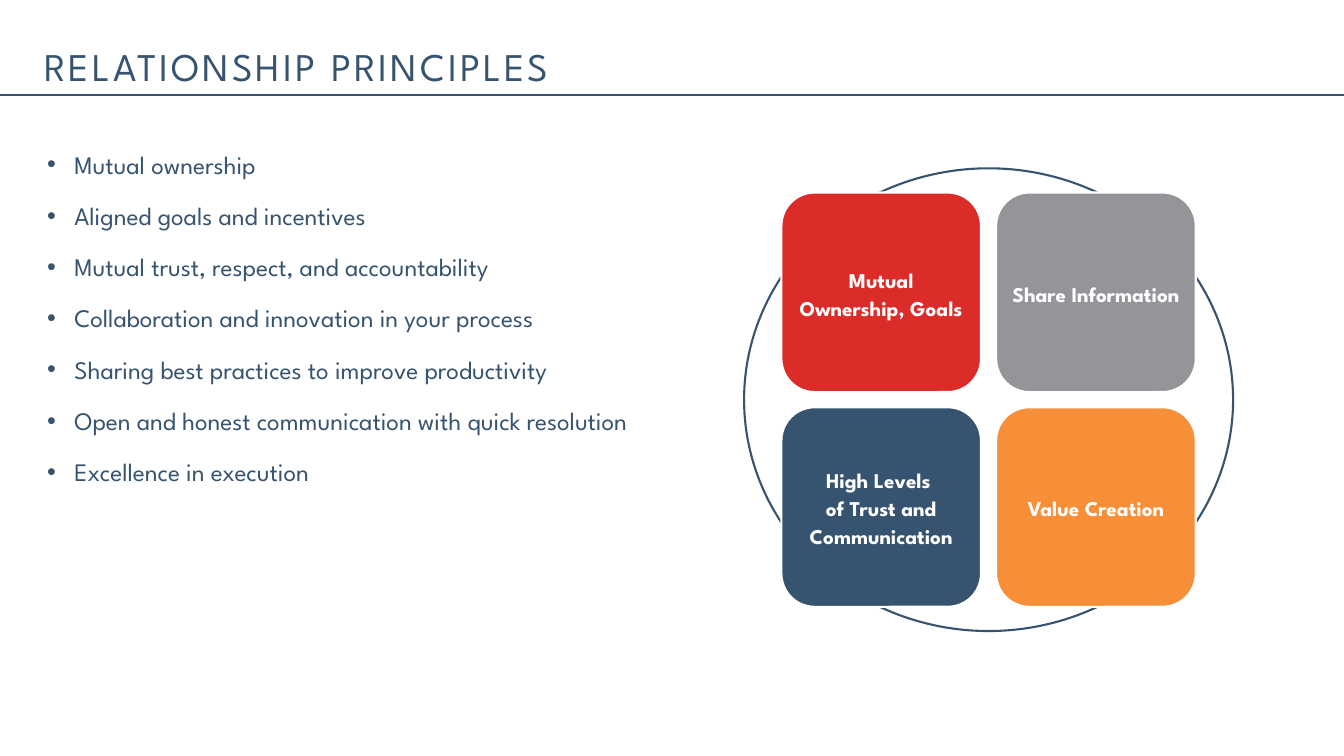
from dataclasses import dataclass

from pptx import Presentation
from pptx.dml.color import RGBColor
from pptx.enum.shapes import MSO_CONNECTOR as Connector, MSO_SHAPE as Shape
from pptx.enum.text import MSO_ANCHOR as Anchor, PP_ALIGN as Align
from pptx.oxml.ns import qn
from pptx.util import Inches, Pt
from lxml.etree import SubElement


@dataclass(frozen=True)
class Theme:
    font: str = "League Spartan"
    navy: str = "365470"
    red: str = "DC2C29"
    gray: str = "939598"
    orange: str = "F78E38"
    white: str = "FFFFFF"
    title_size: int = 28
    body_size: int = 18
    tile_size: int = 15


class SlideBuilder:
    def __init__(self, slide, theme):
        self.slide = slide
        self.theme = theme

    def style_font(self, font, size, color, bold=False):
        font.name = self.theme.font
        font.size = Pt(size)
        font.bold = bold
        font.color.rgb = RGBColor.from_string(color)

    def set_frame(self, frame, anchor, side, edge):
        frame.word_wrap = True
        frame.vertical_anchor = anchor
        frame.margin_left = frame.margin_right = Inches(side)
        frame.margin_top = frame.margin_bottom = Inches(edge)

    def title(self, text, left, top, width, height):
        title = self.slide.shapes.title
        title.left, title.top = Inches(left), Inches(top)
        title.width, title.height = Inches(width), Inches(height)
        frame = title.text_frame
        frame.text = text
        self.set_frame(frame, Anchor.BOTTOM, 0.1, 0.05)
        heading = frame.paragraphs[0]
        heading.alignment = Align.LEFT
        heading.line_spacing = Pt(17.2)
        for run in heading.runs:
            self.style_font(run.font, self.theme.title_size, self.theme.navy)
            run.font._element.set("spc", "220")

    def rule(self, y, width):
        rule = self.slide.shapes.add_connector(
            Connector.STRAIGHT, 0, Inches(y), Inches(width), Inches(y))
        rule.line.color.rgb = RGBColor.from_string(self.theme.navy)
        rule.line.width = Pt(1.25)
        SubElement(rule._element.spPr, qn("a:effectLst"))

    def bullets(self, items, left, top, width, height):
        box = self.slide.shapes.add_textbox(
            Inches(left), Inches(top), Inches(width), Inches(height))
        frame = box.text_frame
        self.set_frame(frame, Anchor.TOP, 0.1, 0.05)
        frame.text = "\n".join(items)
        for item in frame.paragraphs:
            props = item._p.get_or_add_pPr()
            props.set("marL", str(Inches(0.3)))
            props.set("indent", str(Inches(-0.27)))
            item.space_after = Pt(15)
            bullet_color = SubElement(props, qn("a:buClr"))
            SubElement(bullet_color, qn("a:srgbClr"), val=self.theme.navy)
            SubElement(props, qn("a:buFont"), typeface="Arial")
            SubElement(props, qn("a:buChar"), char="•")
            for run in item.runs:
                self.style_font(run.font, self.theme.body_size, self.theme.navy)

    def shape(self, kind, left, top, width, height, line, fill=None):
        shape = self.slide.shapes.add_shape(
            kind, Inches(left), Inches(top), Inches(width), Inches(height))
        shape.shadow.inherit = False
        shape.line.color.rgb = RGBColor.from_string(line)
        shape.line.width = Pt(1.5)
        if fill:
            shape.fill.solid()
            shape.fill.fore_color.rgb = RGBColor.from_string(fill)
        else:
            shape.fill.background()
        return shape

    def tile(self, text, fill, left, top, size):
        tile = self.shape(Shape.ROUNDED_RECTANGLE, left, top, size, size,
                          self.theme.white, fill)
        frame = tile.text_frame
        self.set_frame(frame, Anchor.MIDDLE, 0.06, 0.06)
        frame.text = text
        label = frame.paragraphs[0]
        label.alignment = Align.CENTER
        label.line_spacing = Pt(20)
        for run in label.runs:
            self.style_font(run.font, self.theme.tile_size, self.theme.white, bold=True)


def main():
    theme = Theme()
    deck = Presentation()
    deck.slide_width, deck.slide_height = Inches(13.33), Inches(7.5)
    builder = SlideBuilder(deck.slides.add_slide(deck.slide_layouts[5]), theme)

    # Heading
    builder.rule(0.94, 13.33)
    builder.title("RELATIONSHIP PRINCIPLES", 0.34, 0.03, 12.65, 0.91)

    # Principles
    builder.bullets([
        "Mutual ownership",
        "Aligned goals and incentives",
        "Mutual trust, respect, and accountability",
        "Collaboration and innovation in your process",
        "Sharing best practices to improve productivity",
        "Open and honest communication with quick resolution",
        "Excellence in execution",
    ], 0.34, 1.43, 6.63, 5.67)

    # Ring behind a two-by-two grid of tiles
    builder.shape(Shape.OVAL, 7.38, 1.67, 4.85, 4.59, theme.navy)
    tiles = [
        ("Mutual Ownership, Goals", theme.red),
        ("Share Information", theme.gray),
        ("High Levels \vof Trust and Communication", theme.navy),
        ("Value Creation", theme.orange),
    ]
    pitch = 2.13
    for index, (text, fill) in enumerate(tiles):
        row, column = divmod(index, 2)
        builder.tile(text, fill, 7.75 + column * pitch, 1.91 + row * pitch, 1.98)

    deck.save("out.pptx")


if __name__ == "__main__":
    main()
